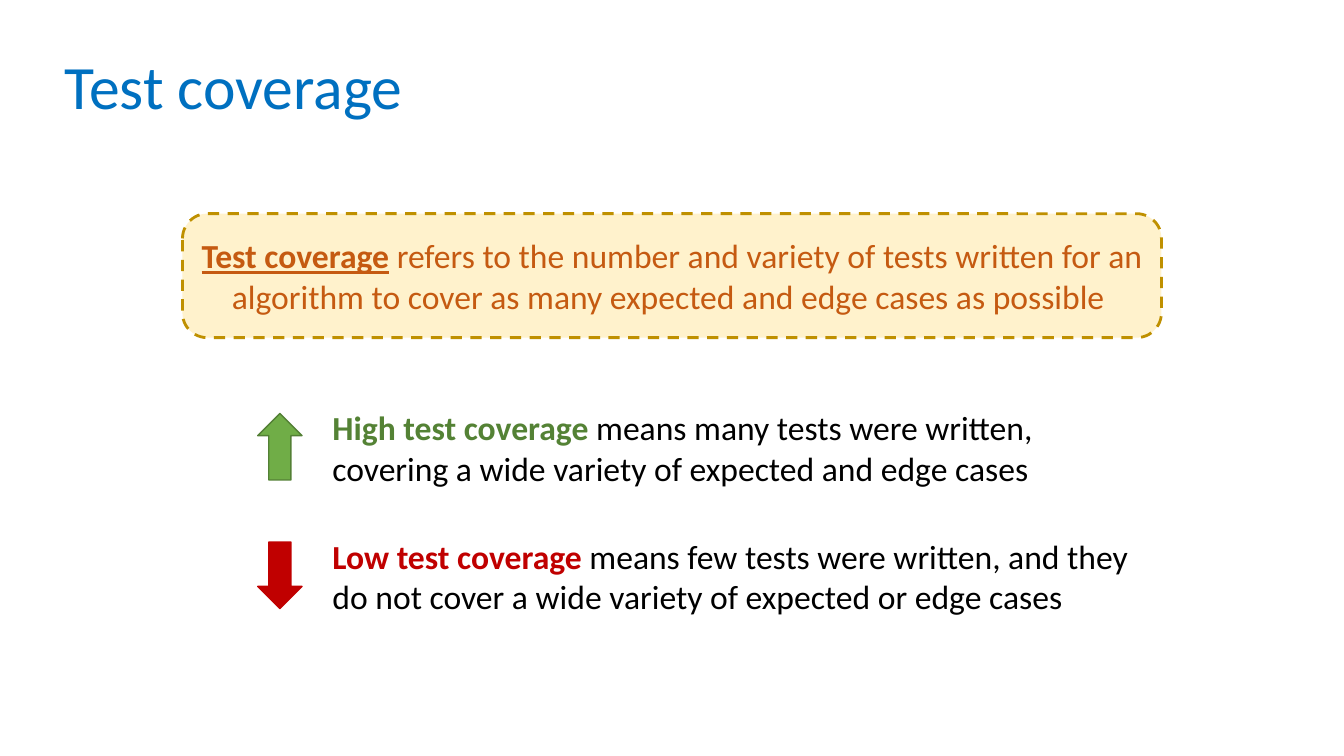
"""Build the slide on test coverage, with lengths in percent of the slide."""
import pptx
import pptx.util
import pptx.dml.color
import pptx.enum.dml
import pptx.enum.shapes
import pptx.enum.text

WIDE = pptx.util.Inches(13.33)
HIGH = pptx.util.Inches(7.5)
SHAPE = pptx.enum.shapes.MSO_SHAPE
ALIGN = pptx.enum.text.PP_ALIGN
MIDDLE = pptx.enum.text.MSO_ANCHOR.MIDDLE
TOP = pptx.enum.text.MSO_ANCHOR.TOP


def area(left, top, width, height):
    return [int(share * full / 100) for share, full in
            ((left, WIDE), (top, HIGH), (width, WIDE), (height, HIGH))]


def paint(target, color):
    target.rgb = pptx.dml.color.RGBColor.from_string(color)


def write(shape, runs, size=24, align=ALIGN.LEFT, anchor=MIDDLE):
    frame = shape.text_frame
    frame.word_wrap = True
    frame.vertical_anchor = anchor
    para = frame.paragraphs[0]
    para.alignment = align
    for text, color, bold, under in runs:
        run = para.add_run()
        run.text = text
        run.font.name = "Calibri"
        run.font.size = pptx.util.Pt(size)
        run.font.bold = bold
        run.font.underline = under
        paint(run.font.color, color)
    return para


def add_title(slide, text):
    title = slide.shapes.title
    title.left, title.top, title.width, title.height = area(4.05, 5.33, 89.12, 13.07)
    para = write(title, [(text, "0070C0", False, False)], 44)
    para.line_spacing = 0.9


def add_form(slide, kind, place, fill, edge, weight):
    form = slide.shapes.add_shape(kind, *area(*place))
    form.shadow.inherit = False
    form.fill.solid()
    paint(form.fill.fore_color, fill)
    paint(form.line.color, edge)
    form.line.width = pptx.util.Pt(weight)
    return form


def add_box(slide, runs):
    box = add_form(slide, SHAPE.ROUNDED_RECTANGLE, (13.58, 28.27, 72.84, 16.4),
                   "FFF2CC", "BF9000", 2)
    box.adjustments[0] = 0.2
    box.line.dash_style = pptx.enum.dml.MSO_LINE.DASH
    write(box, runs, align=ALIGN.CENTER)


def add_level(slide, row, width, lead, rest, color, fill, edge, turn):
    drop = row * 17
    note = slide.shapes.add_textbox(*area(24, 53.2 + drop, width, 12.13))
    write(note, [(lead, color, True, False), (rest, "000000", False, False)], anchor=TOP)
    arrow = add_form(slide, SHAPE.UP_ARROW, (19.17, 54.7 + drop, 3.3, 8.8), fill, edge, 1)
    arrow.rotation = turn


def main():
    deck = pptx.Presentation()
    deck.slide_width, deck.slide_height = WIDE, HIGH
    slide = deck.slides.add_slide(deck.slide_layouts[5])
    add_title(slide, "Test coverage")
    add_box(slide, [
        ("Test coverage", "C55A11", True, True),
        (" refers to the number and variety of tests written for an algorithm "
         "to cover as many expected and edge cases as possible ", "C55A11", False, False),
    ])
    levels = [
        (58.36, "High test coverage ",
         "means many tests were written, covering a wide variety of expected and edge cases",
         "548235", "70AD47", "538035", 0),
        (61.06, "Low test coverage ",
         "means few tests were written, and they do not cover a wide variety "
         "of expected or edge cases",
         "C00000", "C00000", "C00000", 180),
    ]
    for row, level in enumerate(levels):
        add_level(slide, row, *level)
    deck.save("out.pptx")


if __name__ == "__main__":
    main()
